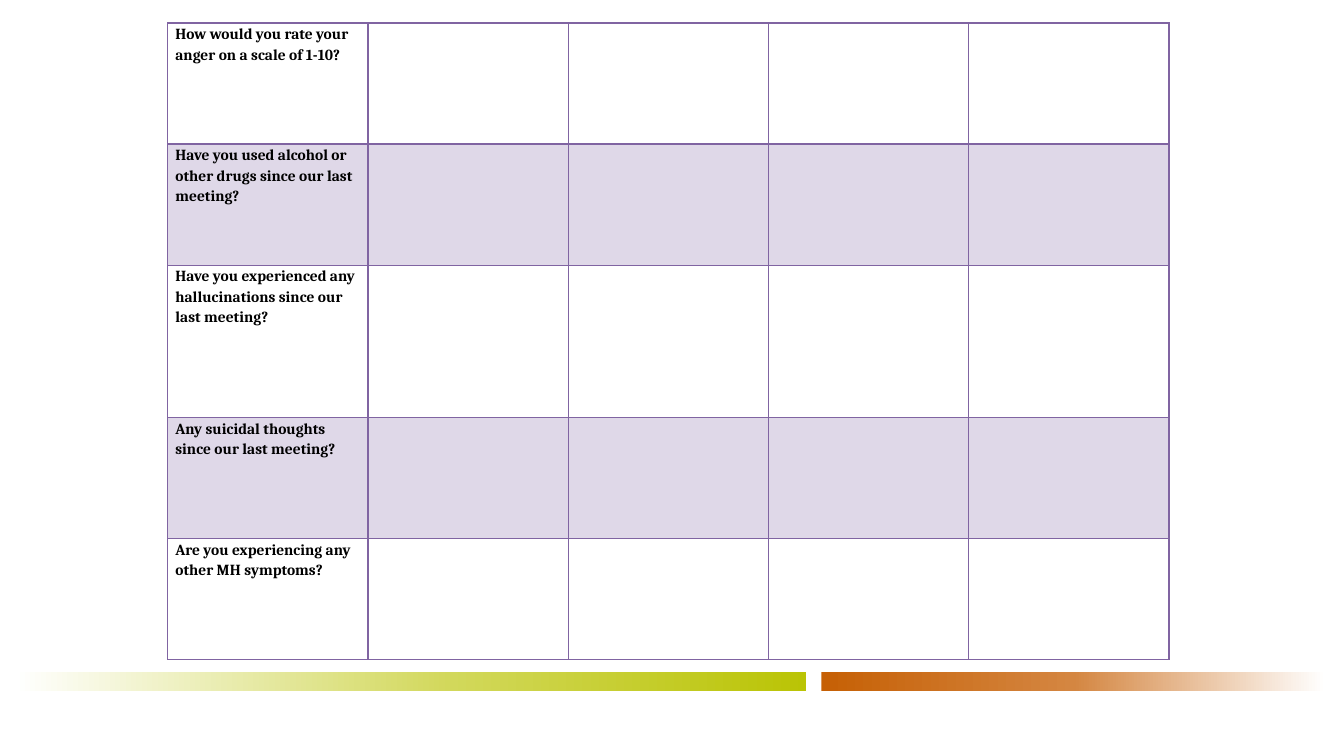
from dataclasses import dataclass

from lxml import etree
from pptx import Presentation
from pptx.dml.color import RGBColor
from pptx.enum.shapes import MSO_SHAPE
from pptx.oxml.ns import qn
from pptx.util import Cm, Pt

RECTANGLE = MSO_SHAPE.RECTANGLE
BLANK_LAYOUT = 6


@dataclass(frozen=True)
class Theme:
    font: str = "Cambria"
    text_size: float = 11
    line_spacing: float = 1.15
    text: str = "000000"
    border: str = "8064A2"
    band: str = "DFD8E8"
    thin: float = 1
    thick: float = 2.25
    green_fade: tuple = ((0, "FFFFFF"), (55, "D2D85B"), (100, "BAC405"))
    orange_fade: tuple = ((0, "C66005"), (50, "D48641"), (100, "FFFFFF"))


THEME = Theme()
COLUMN_COUNT = 5
QUESTIONS = (
    ("How would you rate your anger on a scale of 1-10?", 3.05),
    ("Have you used alcohol or other drugs since our last meeting?", 3.05),
    ("Have you experienced any hallucinations since our last meeting?", 3.84),
    ("Any suicidal thoughts since our last meeting?", 3.05),
    ("Are you experiencing any other MH symptoms?", 3.05),
)


def add_color(parent, color):
    etree.SubElement(parent, qn("a:srgbClr"), val=color)


def add_fading_bar(slide, left, top, width, height, stops):
    """Draw a bar whose colour runs from left to right."""
    bar = slide.shapes.add_shape(RECTANGLE, Cm(left), Cm(top), Cm(width), Cm(height))
    bar.shadow.inherit = False
    bar.line.fill.background()
    bar.fill.gradient()
    bar.fill.gradient_angle = 0
    stop_list = bar._element.spPr.find(qn("a:gradFill")).find(qn("a:gsLst"))
    for stop in list(stop_list):
        stop_list.remove(stop)
    for position, color in stops:
        add_color(etree.SubElement(stop_list, qn("a:gs"), pos=str(position * 1000)), color)


def set_borders(cell, widths):
    """Widths are given in the order left, right, top, bottom."""
    properties = cell._tc.get_or_add_tcPr()
    for side, width in zip("LRTB", widths):
        line = etree.SubElement(properties, qn(f"a:ln{side}"), w=str(Pt(width)))
        add_color(etree.SubElement(line, qn("a:solidFill")), THEME.border)


def write_question(cell, question):
    cell.margin_left = cell.margin_right = Cm(0.19)
    cell.margin_top = cell.margin_bottom = 0
    paragraph = cell.text_frame.paragraphs[0]
    paragraph.text = question
    paragraph.line_spacing = THEME.line_spacing
    paragraph.font.name = THEME.font
    paragraph.font.size = Pt(THEME.text_size)
    paragraph.font.bold = True
    paragraph.font.color.rgb = RGBColor.from_string(THEME.text)


def add_question_table(slide, left, top, width):
    height = sum(row_height for _, row_height in QUESTIONS)
    table = slide.shapes.add_table(
        len(QUESTIONS), COLUMN_COUNT, Cm(left), Cm(top), Cm(width), Cm(height)
    ).table
    table.first_row = table.horz_banding = False
    for column in table.columns:
        column.width = Cm(width / COLUMN_COUNT)

    for row_index, (question, row_height) in enumerate(QUESTIONS):
        table.rows[row_index].height = Cm(row_height)
        # The heavy rule runs below the first row
        top_width = THEME.thick if row_index == 1 else THEME.thin
        bottom_width = THEME.thick if row_index == 0 else THEME.thin
        for cell in table.rows[row_index].cells:
            set_borders(cell, (THEME.thin, THEME.thin, top_width, bottom_width))
            if row_index % 2:
                cell.fill.solid()
                cell.fill.fore_color.rgb = RGBColor.from_string(THEME.band)
            else:
                cell.fill.background()
        write_question(table.cell(row_index, 0), question)


def add_footer_bars(slide, left, top, width, height):
    """Green bar on the left, orange bar on the right, a gap between."""
    green_width, orange_width = 19.96, 12.7
    add_fading_bar(slide, left, top, green_width, height, THEME.green_fade)
    add_fading_bar(
        slide, left + width - orange_width, top, orange_width, height, THEME.orange_fade
    )


def main():
    presentation = Presentation()
    presentation.slide_width = Cm(33.87)
    presentation.slide_height = Cm(19.05)
    slide = presentation.slides.add_slide(presentation.slide_layouts[BLANK_LAYOUT])
    add_footer_bars(slide, 0.36, 16.94, 33.04, 0.48)
    add_question_table(slide, 4.23, 0.58, 25.23)
    presentation.save("out.pptx")


if __name__ == "__main__":
    main()
